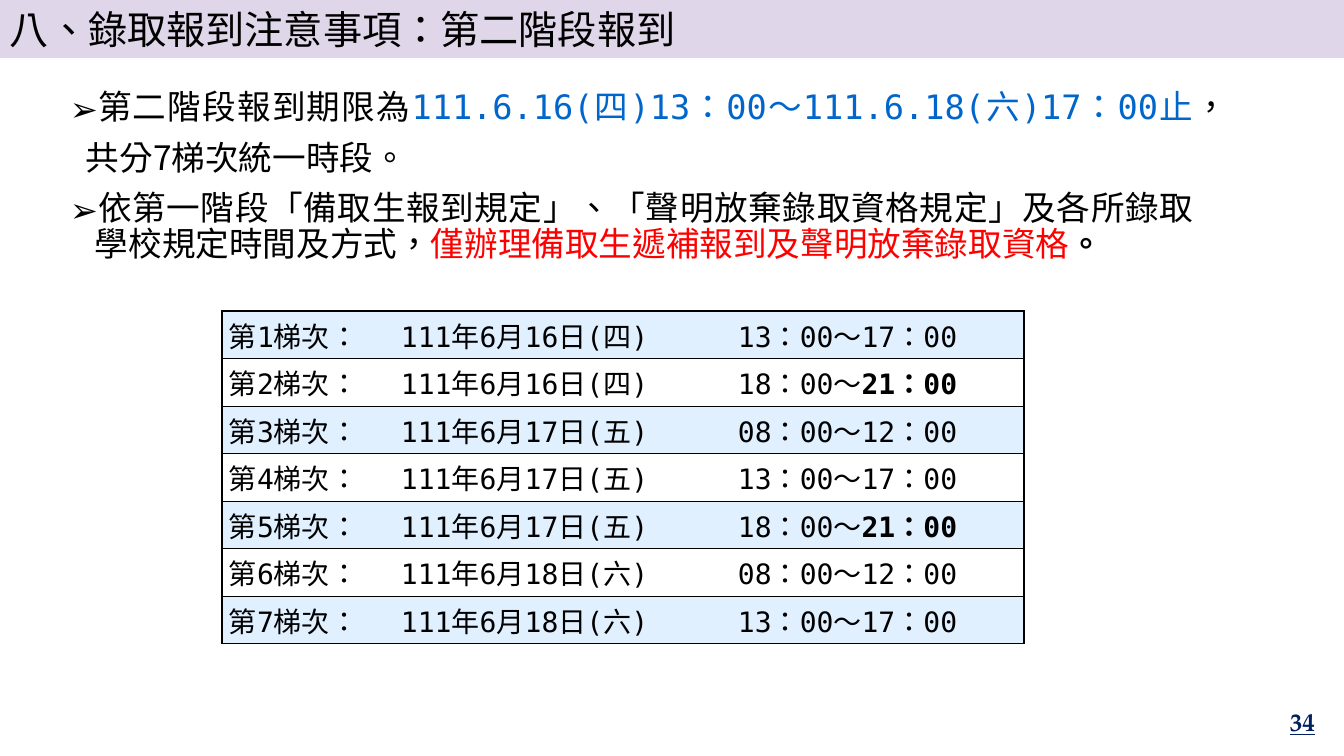
import pptx
import pptx.util
import pptx.dml.color
import pptx.enum.lang
import pptx.enum.shapes
import pptx.enum.text
import pptx.oxml.ns
from lxml import etree

SANS = "Noto Sans CJK JP"
MONO = "DejaVu Sans Mono"
SERIF = "TeX Gyre Pagella"
BLACK = "000000"
ALIGN = pptx.enum.text.PP_ALIGN
MIDDLE = pptx.enum.text.MSO_ANCHOR.MIDDLE

DEADLINE = [
    ("第二階段報到期限為", SANS, BLACK, False),
    ("111.6.16(四)13：00〜111.6.18(六)17：00止", MONO, "0066CC", False),
    ("，", SANS, BLACK, False),
]
SESSIONS_NOTE = [("共分7梯次統一時段。", SANS, BLACK, False)]
RULES = [
    ("依第一階段「備取生報到規定」、「聲明放棄錄取資格規定」及各所錄取學校規定時間及方式，", SANS, BLACK, False),
    ("僅辦理備取生遞補報到及聲明放棄錄取資格", SANS, "FF0000", False),
    ("。", SANS, BLACK, True),
]
SESSIONS = [
    ("16日(四)", "13：00", "17：00"),
    ("16日(四)", "18：00", "21：00"),
    ("17日(五)", "08：00", "12：00"),
    ("17日(五)", "13：00", "17：00"),
    ("17日(五)", "18：00", "21：00"),
    ("18日(六)", "08：00", "12：00"),
    ("18日(六)", "13：00", "17：00"),
]


def px(length):
    return pptx.util.Emu(round(length * 914400 / 100.8))


def rgb(color):
    return pptx.dml.color.RGBColor.from_string(color)


def add_child(parent, tag, **attributes):
    return etree.SubElement(parent, pptx.oxml.ns.qn(tag), **attributes)


def add_run(paragraph, text, size, face, color, bold=False):
    run = paragraph.add_run()
    run.text = text
    font = run.font
    font.size = pptx.util.Pt(size)
    font.bold = bold
    font.color.rgb = rgb(color)
    font.name = face
    font.language_id = pptx.enum.lang.MSO_LANGUAGE_ID.TRADITIONAL_CHINESE
    add_child(font._element, "a:ea", typeface=SANS)
    return run


def add_title(slide, left, top, width, height):
    band = slide.shapes.add_shape(
        pptx.enum.shapes.MSO_SHAPE.RECTANGLE, px(left), px(top), px(width), px(height))
    band.shadow.inherit = False
    band.fill.solid()
    band.fill.fore_color.rgb = rgb("DFD7E9")
    band.line.color.rgb = rgb("DFD7E9")
    band.line.width = pptx.util.Pt(1)
    band.text_frame.word_wrap = True
    band.text_frame.vertical_anchor = MIDDLE
    heading = band.text_frame.paragraphs[0]
    heading.alignment = ALIGN.LEFT
    add_run(heading, "八、錄取報到注意事項：第二階段報到", 28, SANS, BLACK)


def add_notes_list(slide, left, top, width, height):
    frame = slide.shapes.add_textbox(px(left), px(top), px(width), px(height)).text_frame
    frame.word_wrap = True
    for index, (runs, bulleted) in enumerate(
            [(DEADLINE, True), (SESSIONS_NOTE, False), (RULES, True)]):
        paragraph = frame.add_paragraph() if index else frame.paragraphs[0]
        paragraph.alignment = ALIGN.JUSTIFY
        paragraph.line_spacing = 0.9
        if index:
            paragraph.space_before = pptx.util.Pt(10)
        properties = paragraph._p.get_or_add_pPr()
        if bulleted:
            properties.set("marL", str(px(25)))
            properties.set("indent", str(-px(25)))
            add_child(add_child(properties, "a:buClr"), "a:srgbClr", val=BLACK)
            add_child(properties, "a:buFont", typeface=SANS)
            add_child(properties, "a:buChar", char="➢")
        else:
            properties.set("marL", str(px(16)))
        for text, face, color, bold in runs:
            add_run(paragraph, text, 24, face, color, bold)


def set_borders(cell, sides):
    properties = cell._tc.get_or_add_tcPr()
    for position, side in enumerate(["L", "R", "T", "B"]):
        edge = etree.Element(pptx.oxml.ns.qn("a:ln" + side), w="12700")
        if side in sides:
            add_child(add_child(edge, "a:solidFill"), "a:srgbClr", val=BLACK)
        else:
            add_child(edge, "a:noFill")
        properties.insert(position, edge)


def add_schedule(slide, left, top, width, height):
    widths = [172, 337, width - 172 - 337]
    schedule = slide.shapes.add_table(
        len(SESSIONS), len(widths), px(left), px(top), px(width), px(height)).table
    for column, column_width in zip(schedule.columns, widths):
        column.width = px(column_width)
    for index, (day, start, end) in enumerate(SESSIONS):
        schedule.rows[index].height = px(height / len(SESSIONS))
        contents = [
            [(f"第{index + 1}梯次：", False)],
            [(f"111年6月{day}", False)],
            [(f"{start}〜", False), (end, end == "21：00")],
        ]
        for cell, runs, sides in zip(schedule.rows[index].cells, contents, ["LTB", "TB", "RTB"]):
            cell.fill.solid()
            cell.fill.fore_color.rgb = rgb("FFFFFF" if index % 2 else "E1F0FF")
            cell.vertical_anchor = MIDDLE
            cell.margin_left = cell.margin_right = px(7)
            cell.margin_top = cell.margin_bottom = 0
            set_borders(cell, sides)
            for text, bold in runs:
                add_run(cell.text_frame.paragraphs[0], text, 20, MONO, BLACK, bold)


def add_page_number(slide, left, top, width, height):
    frame = slide.shapes.add_textbox(px(left), px(top), px(width), px(height)).text_frame
    frame.word_wrap = True
    frame.vertical_anchor = MIDDLE
    frame.paragraphs[0].alignment = ALIGN.RIGHT
    number = add_run(frame.paragraphs[0], "34", 18, SERIF, "002060", True)
    number.font.underline = True


def main():
    deck = pptx.Presentation()
    deck.slide_width, deck.slide_height = px(1344), px(756)
    slide = deck.slides.add_slide(deck.slide_layouts[6])
    add_page_number(slide, 1023, 701, 302, 40)
    add_title(slide, 0, 0, 1344, 57)
    add_notes_list(slide, 60, 86, 1144, 197)
    add_schedule(slide, 222, 311, 802, 333)
    deck.save("out.pptx")


if __name__ == "__main__":
    main()
